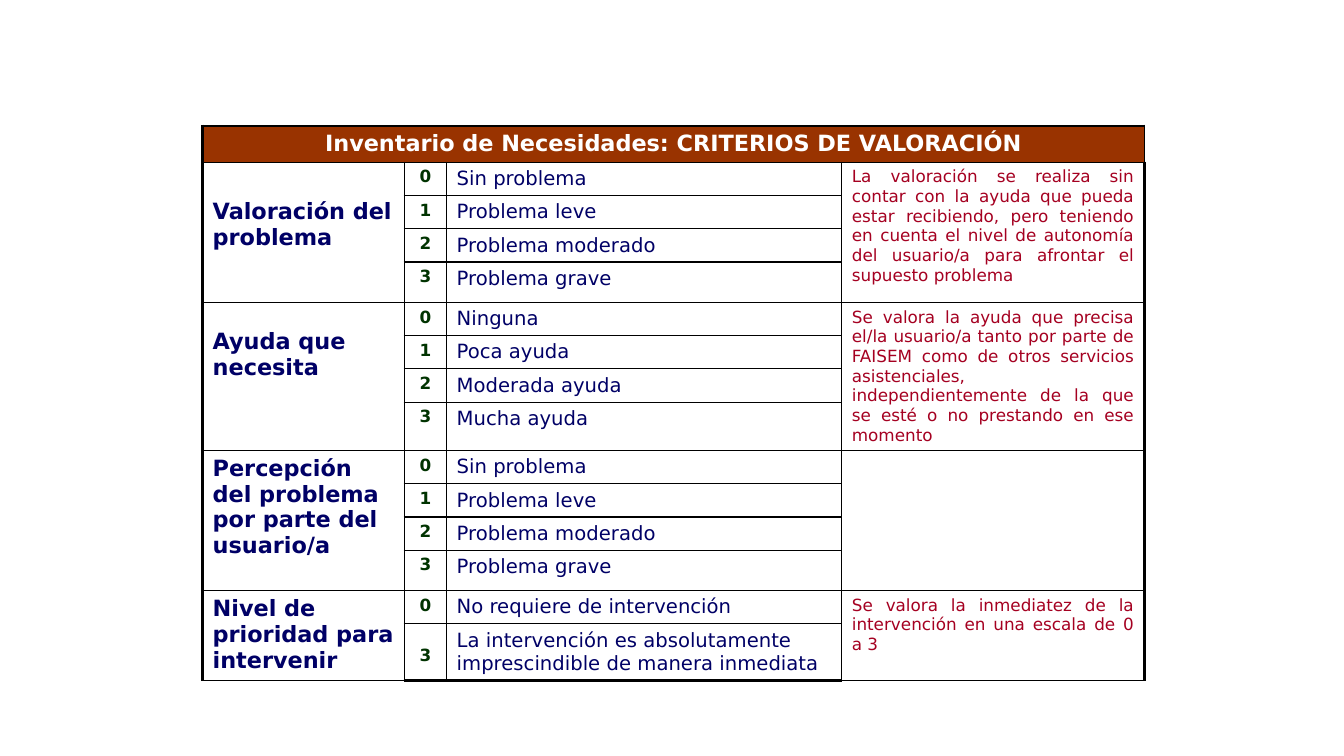
import pptx
import pptx.util
import pptx.dml.color
import pptx.enum.text
import pptx.oxml
import pptx.oxml.ns

Inches = pptx.util.Inches
ALIGN = pptx.enum.text.PP_ALIGN
FONT = "DejaVu Sans"
BLACK = "000000"
THIN, THICK = 1, 2.25

TITLE = "Inventario de Necesidades: CRITERIOS DE VALORACIÓN"
COL_WIDTHS = [2, 0.42, 3.92, 3]
HEADER_HEIGHT = 0.36
LEVELS = ["Sin problema", "Problema leve", "Problema moderado", "Problema grave"]

# Criterion, top margin, note, levels (score, description, row height)
CRITERIA = [
    ("Valoración del problema", 0.36,
     "La valoración se realiza sin contar con la ayuda que pueda estar recibiendo, "
     "pero teniendo en cuenta el nivel de autonomía del usuario/a para afrontar el "
     "supuesto problema",
     list(zip("0123", LEVELS, [0.33, 0.33, 0.33, 0.4]))),
    ("Ayuda que necesita", 0.26,
     "Se valora la ayuda que precisa el/la usuario/a tanto por parte de FAISEM como "
     "de otros servicios asistenciales, independientemente de la que se esté o no "
     "prestando en ese momento",
     list(zip("0123", ["Ninguna", "Poca ayuda", "Moderada ayuda", "Mucha ayuda"],
              [0.33, 0.33, 0.33, 0.48]))),
    ("Percepción del problema por parte del usuario/a", 0.05, "",
     list(zip("0123", LEVELS, [0.33, 0.33, 0.33, 0.4]))),
    ("Nivel de prioridad para intervenir", 0.05,
     "Se valora la inmediatez de la intervención en una escala de 0 a 3",
     [("0", "No requiere de intervención", 0.33),
      ("3", "La intervención es absolutamente imprescindible de manera inmediata", 0.56)]),
]

# Text formats by role
HEADER = dict(size=16, bold=True, color="FFFFFF", align=ALIGN.CENTER)
LABEL = dict(size=16, bold=True, color="000066", align=ALIGN.LEFT)
SCORE = dict(size=12, bold=True, color="003300", align=ALIGN.CENTER)
LEVEL = dict(size=14, bold=False, color="000066", align=ALIGN.LEFT)
NOTE = dict(size=12, bold=False, color="A50021", align=ALIGN.JUSTIFY)


def rgb(value):
    return pptx.dml.color.RGBColor.from_string(value)


def write_cell(cell, text, style, top=0.05):
    cell.margin_top = Inches(top)
    p = cell.text_frame.paragraphs[0]
    p.alignment = style["align"]
    if not text:
        return
    r = p.add_run()
    r.text = text
    attrs = dict(name=FONT, size=pptx.util.Pt(style["size"]), bold=style["bold"])
    for name, value in attrs.items():
        setattr(r.font, name, value)
    r.font.color.rgb = rgb(style["color"])


def set_border(cell, side, width):
    ns = pptx.oxml.ns.nsdecls("a")
    line = pptx.oxml.parse_xml(
        f'<a:ln{side} {ns} w="{int(pptx.util.Pt(width))}"><a:solidFill>'
        f'<a:srgbClr val="{BLACK}"/></a:solidFill></a:ln{side}>')
    cell._tc.get_or_add_tcPr().append(line)


def frame_table(table):
    """Thin inner lines, thick outline, no fill."""
    last_row, last_col = len(table.rows) - 1, len(table.columns) - 1
    for i in range(last_row + 1):
        for j in range(last_col + 1):
            cell = table.cell(i, j)
            edges = dict(L=j == 0, R=j == last_col, T=i == 0, B=i == last_row)
            for side, outer in edges.items():
                set_border(cell, side, THICK if outer else THIN)
            cell.fill.background()


def add_criteria_table(s, left, top):
    heights = [HEADER_HEIGHT] + [level[2] for c in CRITERIA for level in c[3]]
    table = s.shapes.add_table(
        len(heights), len(COL_WIDTHS), Inches(left), Inches(top),
        Inches(sum(COL_WIDTHS)), Inches(sum(heights))).table
    table.first_row = table.horz_banding = False
    for column, width in zip(table.columns, COL_WIDTHS):
        column.width = Inches(width)
    for row, height in zip(table.rows, heights):
        row.height = Inches(height)
    frame_table(table)

    # Header
    header = table.cell(0, 0)
    header.merge(table.cell(0, len(COL_WIDTHS) - 1))
    header.fill.solid()
    header.fill.fore_color.rgb = rgb("993300")
    write_cell(header, TITLE, HEADER)

    # Criteria groups
    first = 1
    for label, label_top, note, levels in CRITERIA:
        last = first + len(levels) - 1
        for col in (0, 3):
            table.cell(first, col).merge(table.cell(last, col))
        write_cell(table.cell(first, 0), label, LABEL, label_top)
        write_cell(table.cell(first, 3), note, NOTE)
        for i, (score, text, height) in enumerate(levels, first):
            # The score of a two-line level sits lower
            write_cell(table.cell(i, 1), score, SCORE, 0.22 if height > 0.5 else 0.05)
            write_cell(table.cell(i, 2), text, LEVEL)
        first = last + 1


def main():
    prs = pptx.Presentation()
    prs.slide_width, prs.slide_height = Inches(13.33), Inches(7.5)
    s = prs.slides.add_slide(prs.slide_layouts[6])
    add_criteria_table(s, 2.01, 1.25)
    prs.save("out.pptx")


if __name__ == "__main__":
    main()
